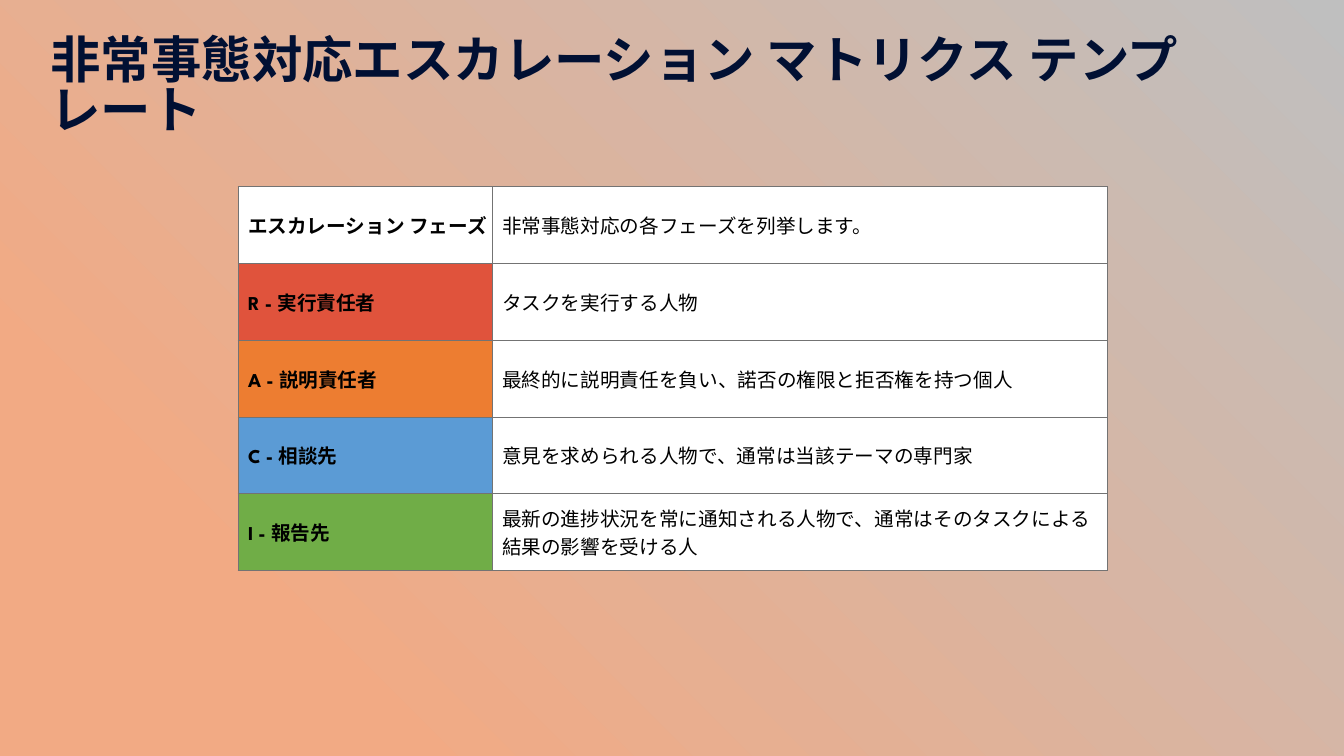
"""Build the incident escalation matrix slide: a title and a RACI legend table."""
from lxml.etree import SubElement
from pptx import Presentation
from pptx.dml.color import RGBColor
from pptx.enum.text import MSO_ANCHOR, MSO_AUTO_SIZE, PP_ALIGN
from pptx.oxml import parse_xml
from pptx.oxml.ns import nsdecls, qn
from pptx.util import Inches, Pt


def paint(hex_color):
    return RGBColor.from_string(hex_color)


def add_span(para, text, size, hex_color, bold):
    span = para.add_run()
    span.text = text
    span.font.name = "League Spartan"
    span.font.size = Pt(size)
    span.font.bold = bold
    span.font.color.rgb = paint(hex_color)


deck = Presentation()
deck.slide_width, deck.slide_height = Inches(13.33), Inches(7.5)
page = deck.slides.add_slide(deck.slide_layouts[5])

backdrop = page.background.fill
backdrop.gradient()
for stop, (position, color) in zip(
    backdrop.gradient_stops, [(0.19, "F2AA84"), (1, "BFBFBF")]
):
    stop.position = position
    stop.color.rgb = paint(color)
linear = page.element.find(".//" + qn("a:lin"))
linear.getparent().replace(linear, parse_xml(
    f'<a:path {nsdecls("a")} path="circle">'
    '<a:fillToRect t="100000" r="100000"/></a:path>'
))

title = page.shapes.title
title.left, title.top = Inches(0.4), Inches(0.28)
title.width, title.height = Inches(12.1), Inches(0.81)
frame = title.text_frame
frame.word_wrap = True
frame.auto_size = MSO_AUTO_SIZE.SHAPE_TO_FIT_TEXT
frame.vertical_anchor = MSO_ANCHOR.TOP
frame.margin_left = frame.margin_right = Inches(0.1)
frame.margin_top = frame.margin_bottom = Inches(0.1)
heading = frame.paragraphs[0]
heading.alignment = PP_ALIGN.LEFT
heading.line_spacing = 0.83
add_span(heading, "非常事態対応エスカレーション マトリクス テンプレート", 36, "011033", True)

roles = [
    ("エスカレーション フェーズ", "非常事態対応の各フェーズを列挙します。", "FFFFFF"),
    ("R - 実行責任者", "タスクを実行する人物", "E0533C"),
    ("A - 説明責任者", "最終的に説明責任を負い、諾否の権限と拒否権を持つ個人", "ED7D31"),
    ("C - 相談先", "意見を求められる人物で、通常は当該テーマの専門家", "5B9BD5"),
    ("I - 報告先",
     "最新の進捗状況を常に通知される人物で、通常はそのタスクによる結果の影響を受ける人",
     "70AD47"),
]
matrix = page.shapes.add_table(
    len(roles), 2, Inches(2.36), Inches(1.85), Inches(8.62), Inches(3.81)
).table
matrix.first_row = matrix.horz_banding = False
matrix.columns[0].width = Inches(2.52)
matrix.columns[1].width = Inches(6.1)

for row, (role, meaning, role_color) in enumerate(roles):
    matrix.rows[row].height = Inches(3.81 / len(roles))
    entries = [(role, role_color, True), (meaning, "FFFFFF", False)]
    for column, (text, fill_color, bold) in enumerate(entries):
        cell = matrix.cell(row, column)
        cell.vertical_anchor = MSO_ANCHOR.MIDDLE
        cell.margin_left = Inches(0.1)
        cell.margin_right = cell.margin_top = cell.margin_bottom = 0
        add_span(cell.text_frame.paragraphs[0], text, 14, "000000", bold)
        properties = cell._tc.get_or_add_tcPr()
        for side in ("lnL", "lnR", "lnT", "lnB"):
            border = SubElement(properties, qn(f"a:{side}"), w=str(Pt(0.5)))
            solid = SubElement(border, qn("a:solidFill"))
            SubElement(solid, qn("a:srgbClr"), val="737373")
        cell.fill.solid()
        cell.fill.fore_color.rgb = paint(fill_color)

deck.save("out.pptx")
